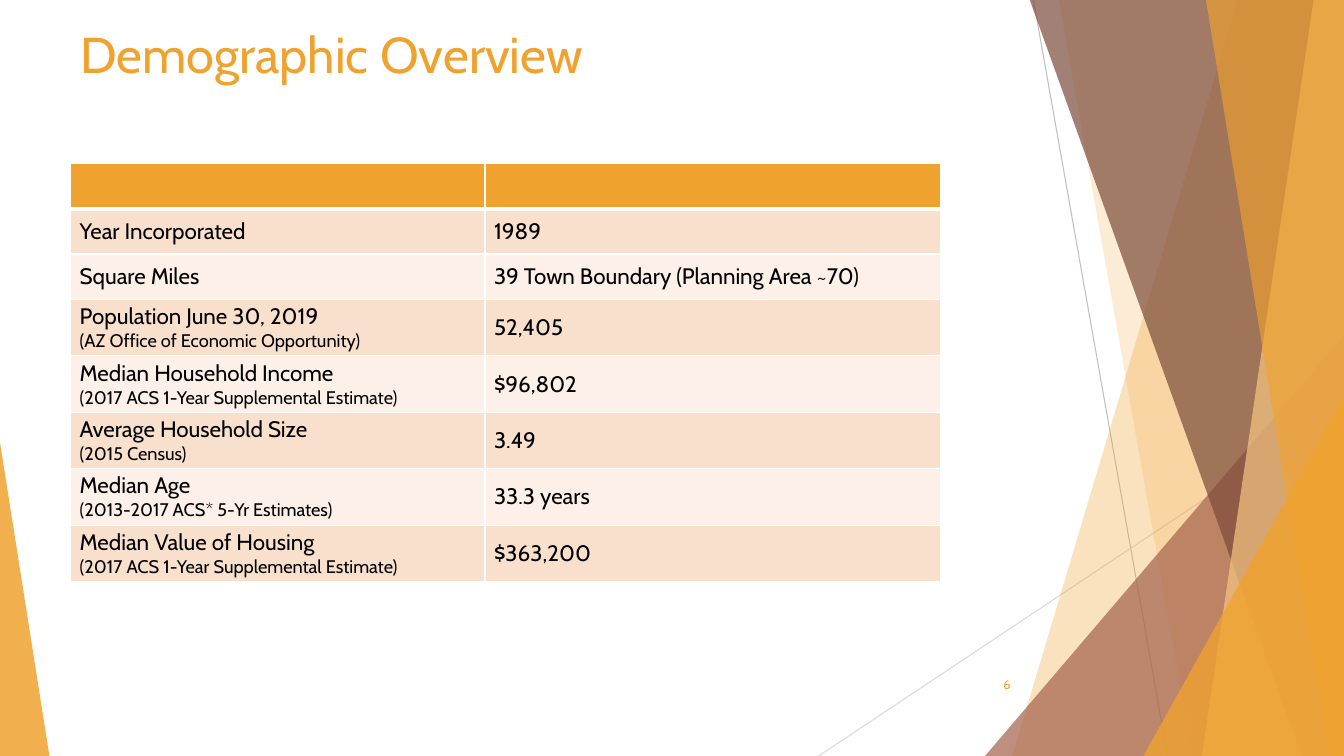
from lxml import etree
from pptx import Presentation
from pptx.dml.color import RGBColor
from pptx.enum.shapes import MSO_CONNECTOR as Connector, MSO_SHAPE as Shape
from pptx.enum.text import MSO_ANCHOR as Anchor, PP_ALIGN as Align
from pptx.oxml.ns import qn
from pptx.util import Inches, Pt

ORANGE = RGBColor(0xF0, 0xA2, 0x2E)
PALE_ORANGE = RGBColor(0xF6, 0xC7, 0x82)
RUST = RGBColor(0xA5, 0x64, 0x4E)
BROWN = RGBColor(0x7C, 0x4B, 0x3B)
BAND_DARK = RGBColor(0xF9, 0xE0, 0xCD)
BAND_LIGHT = RGBColor(0xFC, 0xF0, 0xE8)
GRAY = RGBColor(0xBF, 0xBF, 0xBF)
LIGHT_GRAY = RGBColor(0xD9, 0xD9, 0xD9)
BLACK = RGBColor(0, 0, 0)
WHITE = RGBColor(0xFF, 0xFF, 0xFF)

WIDTH, HEIGHT = 13.33, 7.5
FACTS = [
    (["Year Incorporated"], "1989"),
    (["Square Miles"], "39 Town Boundary (Planning Area ~70)"),
    (["Population June 30, 2019", "(AZ Office of Economic Opportunity)"], "52,405"),
    (["Median Household Income", "(2017 ACS 1-Year Supplemental Estimate)"], "$96,802"),
    (["Average Household Size", "(2015 Census)"], "3.49"),
    (["Median Age", "(2013-2017 ACS* 5-Yr Estimates)"], "33.3 years"),
    (["Median Value of Housing", "(2017 ACS 1-Year Supplemental Estimate)"], "$363,200"),
]


class SlideBuilder:
    font = "Cabin"

    def __init__(self, page):
        self.page = page
        self.shapes = page.shapes

    def add_span(self, para, text, size, color):
        span = para.add_run()
        span.text = text
        span.font.name = self.font
        span.font.size = Pt(size)
        span.font.color.rgb = color

    def title(self, text, left, top, width, height):
        box = self.shapes.title
        box.left, box.top = Inches(left), Inches(top)
        box.width, box.height = Inches(width), Inches(height)
        box.text_frame.vertical_anchor = Anchor.TOP
        para = box.text_frame.paragraphs[0]
        para.alignment = Align.LEFT
        self.add_span(para, text, 36, ORANGE)

    def page_number(self, text, left, top, width, height):
        box = self.shapes.add_textbox(Inches(left), Inches(top), Inches(width), Inches(height))
        box.text_frame.word_wrap = True
        box.text_frame.vertical_anchor = Anchor.MIDDLE
        para = box.text_frame.paragraphs[0]
        para.alignment = Align.RIGHT
        self.add_span(para, text, 9, ORANGE)

    def line(self, start, end, color):
        line = self.shapes.add_connector(
            Connector.STRAIGHT, *(Inches(value) for value in start + end))
        line.line.color.rgb = color
        line.line.width = Pt(0.75)
        etree.SubElement(line._element.spPr, qn("a:effectLst"))

    def paint(self, shape, color, opacity):
        """Fill without outline or shadow; opacity is in percent."""
        shape.shadow.inherit = False
        shape.line.fill.background()
        shape.fill.solid()
        shape.fill.fore_color.rgb = color
        tone = shape._element.spPr.find(qn("a:solidFill"))[0]
        etree.SubElement(tone, qn("a:alpha"), val=str(opacity * 1000))

    def shard(self, top_left, bottom_left, color, opacity):
        """Full-height panel with a slanted left side, reaching the right edge."""
        corners = [(top_left, -0.01), (WIDTH, -0.01), (WIDTH, HEIGHT), (bottom_left, HEIGHT)]
        points = [(Inches(x), Inches(y)) for x, y in corners]
        outline = self.shapes.build_freeform(*points[0])
        outline.add_line_segments(points[1:], close=True)
        self.paint(outline.convert_to_shape(), color, opacity)

    def triangle(self, left, top, width, apex, color, opacity):
        """Triangle standing on the bottom edge; apex 0 is left, 1 is right."""
        shape = self.shapes.add_shape(
            Shape.ISOSCELES_TRIANGLE, Inches(left), Inches(top),
            Inches(width), Inches(HEIGHT - top))
        shape.adjustments[0] = apex
        self.paint(shape, color, opacity)

    def cell_style(self, cell, fill, top_border, bottom_border):
        cell.fill.solid()
        cell.fill.fore_color.rgb = fill
        cell.vertical_anchor = Anchor.MIDDLE
        cell.margin_left = cell.margin_right = Inches(0.09)
        cell.margin_top = cell.margin_bottom = Inches(0.03)
        props = cell._tc.get_or_add_tcPr()
        borders = [("L", 1), ("R", 1), ("T", top_border), ("B", bottom_border)]
        for index, (side, width) in enumerate(borders):
            border = etree.Element(qn(f"a:ln{side}"), w=str(Pt(width)))
            paint = etree.SubElement(border, qn("a:solidFill"))
            etree.SubElement(paint, qn("a:srgbClr"), val=str(WHITE))
            props.insert(index, border)

    def cell_text(self, cell, lines):
        """First line large, the source note below it small."""
        frame = cell.text_frame
        for index, text in enumerate(lines):
            para = frame.add_paragraph() if index else frame.paragraphs[0]
            self.add_span(para, text, 13 if index else 16, BLACK)

    def fact_table(self, facts, left, top, column_widths):
        heights = [0.45] + [0.45 if len(label) == 1 else 0.56 for label, _ in facts]
        table = self.shapes.add_table(
            len(heights), len(column_widths), Inches(left), Inches(top),
            Inches(sum(column_widths)), Inches(sum(heights))).table
        for column, width in zip(table.columns, column_widths):
            column.width = Inches(width)
        for row, height in zip(table.rows, heights):
            row.height = Inches(height)
        for cell in table.rows[0].cells:
            self.cell_style(cell, ORANGE, 1, 3)
        for index, (label, value) in enumerate(facts, start=1):
            fill = BAND_DARK if index % 2 else BAND_LIGHT
            for cell, lines in zip(table.rows[index].cells, (label, [value])):
                self.cell_style(cell, fill, 3 if index == 1 else 1, 1)
                self.cell_text(cell, lines)


def main():
    deck = Presentation()
    deck.slide_width, deck.slide_height = Inches(WIDTH), Inches(HEIGHT)
    slide = SlideBuilder(deck.slides.add_slide(deck.slide_layouts[5]))

    slide.line((10.25, 0), (11.58, HEIGHT), GRAY)
    slide.line((WIDTH, 4.03), (8.12, HEIGHT), LIGHT_GRAY)
    slide.shard(12.28, 10.04, ORANGE, 30)
    slide.shard(10.5, 11.83, ORANGE, 20)
    slide.triangle(9.77, 3.33, 3.56, 1, RUST, 72)
    slide.shard(10.21, 12.91, BROWN, 70)
    slide.shard(13.03, 11.92, PALE_ORANGE, 70)
    slide.shard(11.96, 13.18, ORANGE, 65)
    slide.triangle(11.34, 3.93, 1.99, 1, ORANGE, 80)
    slide.triangle(0, 4.39, 0.49, 0, ORANGE, 85)

    slide.page_number("6", 9.68, 6.59, 0.44, 0.4)
    slide.fact_table(FACTS, 0.7, 1.62, [4.11, 4.52])
    slide.title("Demographic Overview", 0.7, 0.18, 9.4, 1.44)
    deck.save("out.pptx")


if __name__ == "__main__":
    main()
